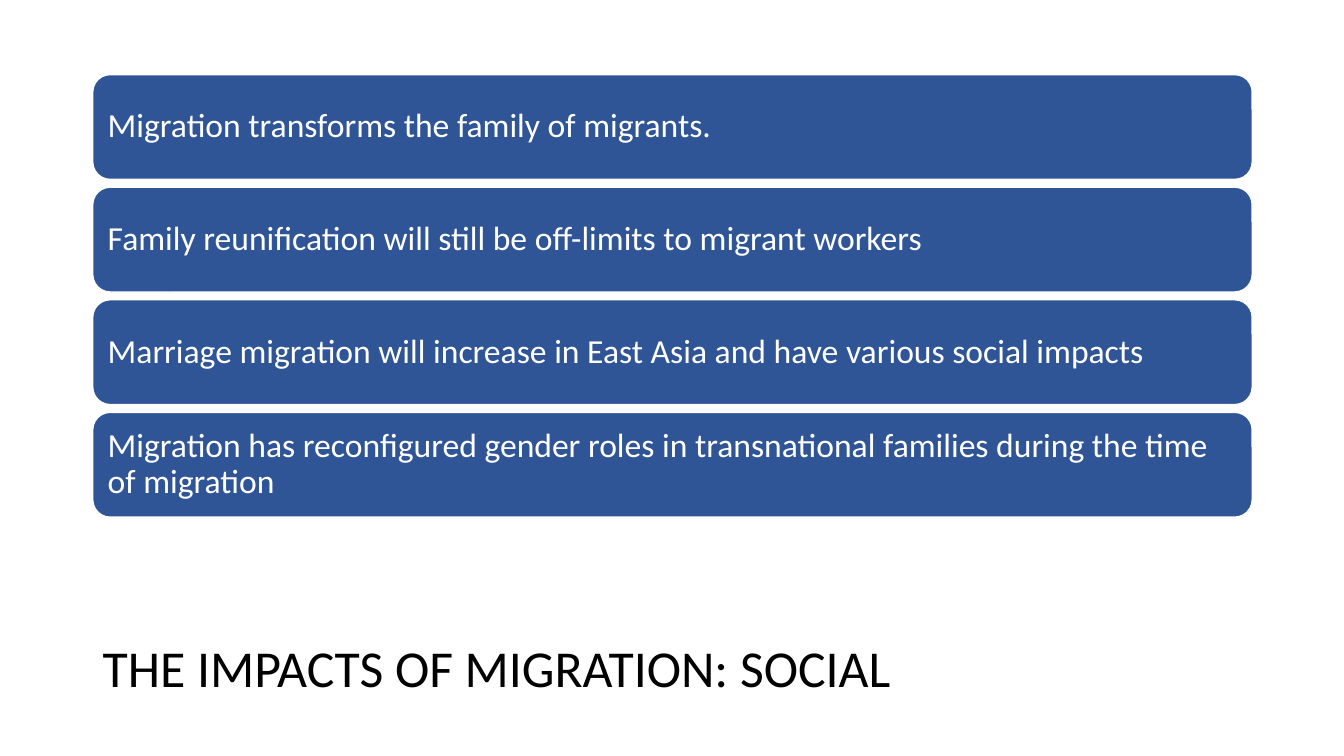
from pptx import Presentation
from pptx.dml.color import RGBColor
from pptx.enum.shapes import MSO_SHAPE
from pptx.enum.text import MSO_ANCHOR, PP_ALIGN
from pptx.util import Inches, Pt

COLOURS = {"bar": "2F5597", "outline": "FFFFFF", "bar_text": "FFFFFF", "title": "000000"}
TITLE = "THE IMPACTS OF MIGRATION: SOCIAL"
IMPACTS = [
    "Migration transforms the family of migrants.",
    "Family reunification will still be off-limits to migrant workers",
    "Marriage migration will increase in East Asia and have various social impacts",
    "Migration has reconfigured gender roles in transnational families during the time of migration",
]
LEFT = 0.92
BAR_TOP, BAR_WIDTH, BAR_HEIGHT, BAR_PITCH = 0.74, 11.5, 1.04, 1.117


def colour(name):
    """Return the named colour."""
    return RGBColor.from_string(COLOURS[name])


def set_text(shape, text, size, colour_name):
    """Write one left-aligned, vertically centred paragraph in a shape."""
    frame = shape.text_frame
    frame_format = {
        "word_wrap": True,
        "vertical_anchor": MSO_ANCHOR.MIDDLE,
        "margin_left": Inches(0.1),
        "margin_right": Inches(0.1),
        "margin_top": Inches(0.1),
        "margin_bottom": Inches(0.1),
    }
    for name, value in frame_format.items():
        setattr(frame, name, value)
    paragraph = frame.paragraphs[0]
    paragraph.alignment = PP_ALIGN.LEFT
    paragraph.line_spacing = 0.9
    run = paragraph.add_run()
    run.text = text
    for name, value in {"name": "Calibri", "size": Pt(size)}.items():
        setattr(run.font, name, value)
    run.font.color.rgb = colour(colour_name)


def add_title(slide):
    """Add the slide title below the bars."""
    title = slide.shapes.add_textbox(Inches(LEFT), Inches(6.05), Inches(8.44), Inches(1.2))
    set_text(title, TITLE, 37, "title")


def add_impact_bar(slide, index, text):
    """Add one rounded bar at its place in the stack."""
    top = BAR_TOP + index * BAR_PITCH
    bar = slide.shapes.add_shape(
        MSO_SHAPE.ROUNDED_RECTANGLE,
        Inches(LEFT), Inches(top), Inches(BAR_WIDTH), Inches(BAR_HEIGHT),
    )
    bar.shadow.inherit = False
    bar.fill.solid()
    bar.fill.fore_color.rgb = colour("bar")
    bar.line.color.rgb = colour("outline")
    bar.line.width = Pt(1)
    set_text(bar, text, 24, "bar_text")


def main():
    """Build and save the slide."""
    presentation = Presentation()
    presentation.slide_width = Inches(13.33)
    presentation.slide_height = Inches(7.5)
    slide = presentation.slides.add_slide(presentation.slide_layouts[6])
    add_title(slide)
    for index, text in enumerate(IMPACTS):
        add_impact_bar(slide, index, text)
    presentation.save("out.pptx")


if __name__ == "__main__":
    main()
